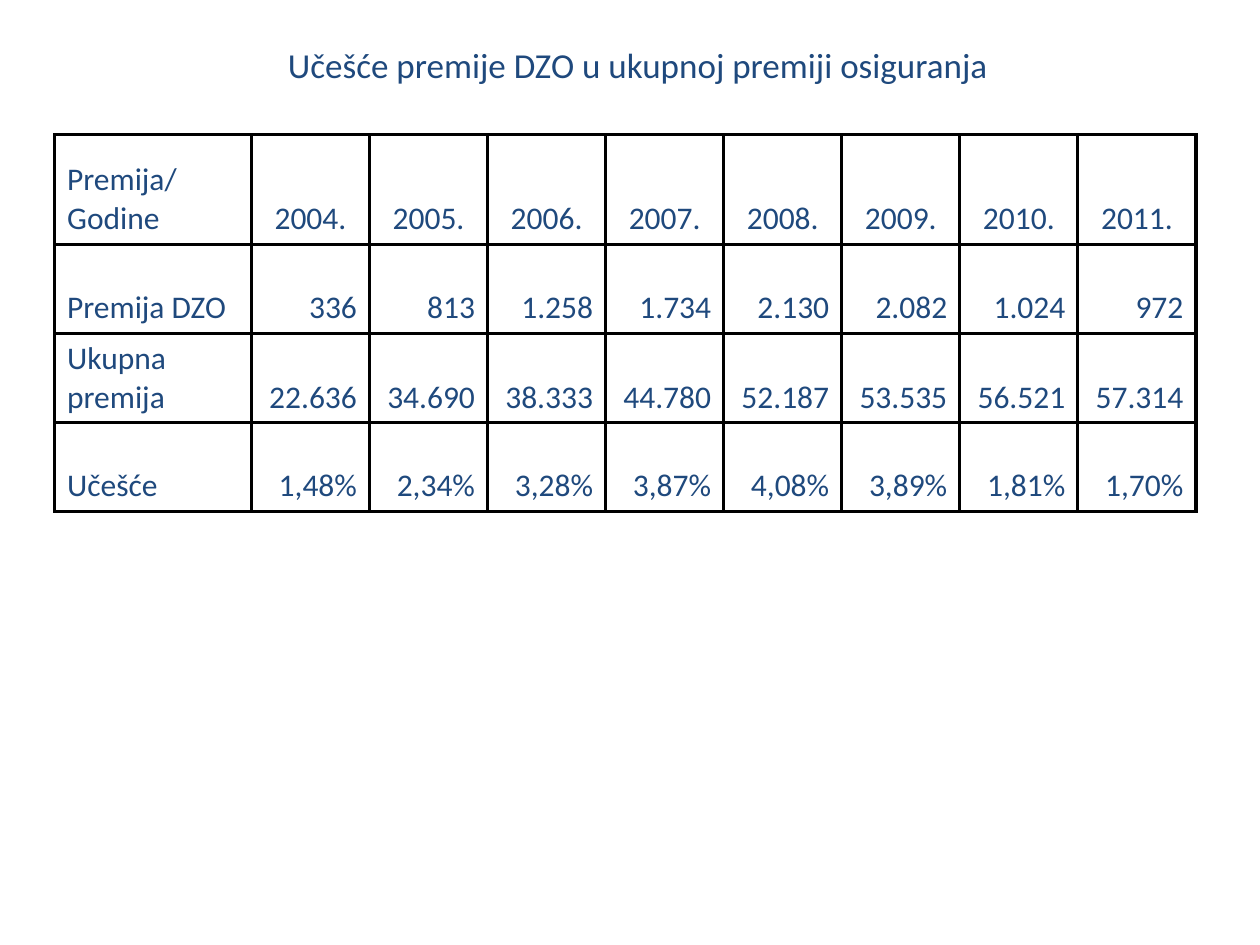
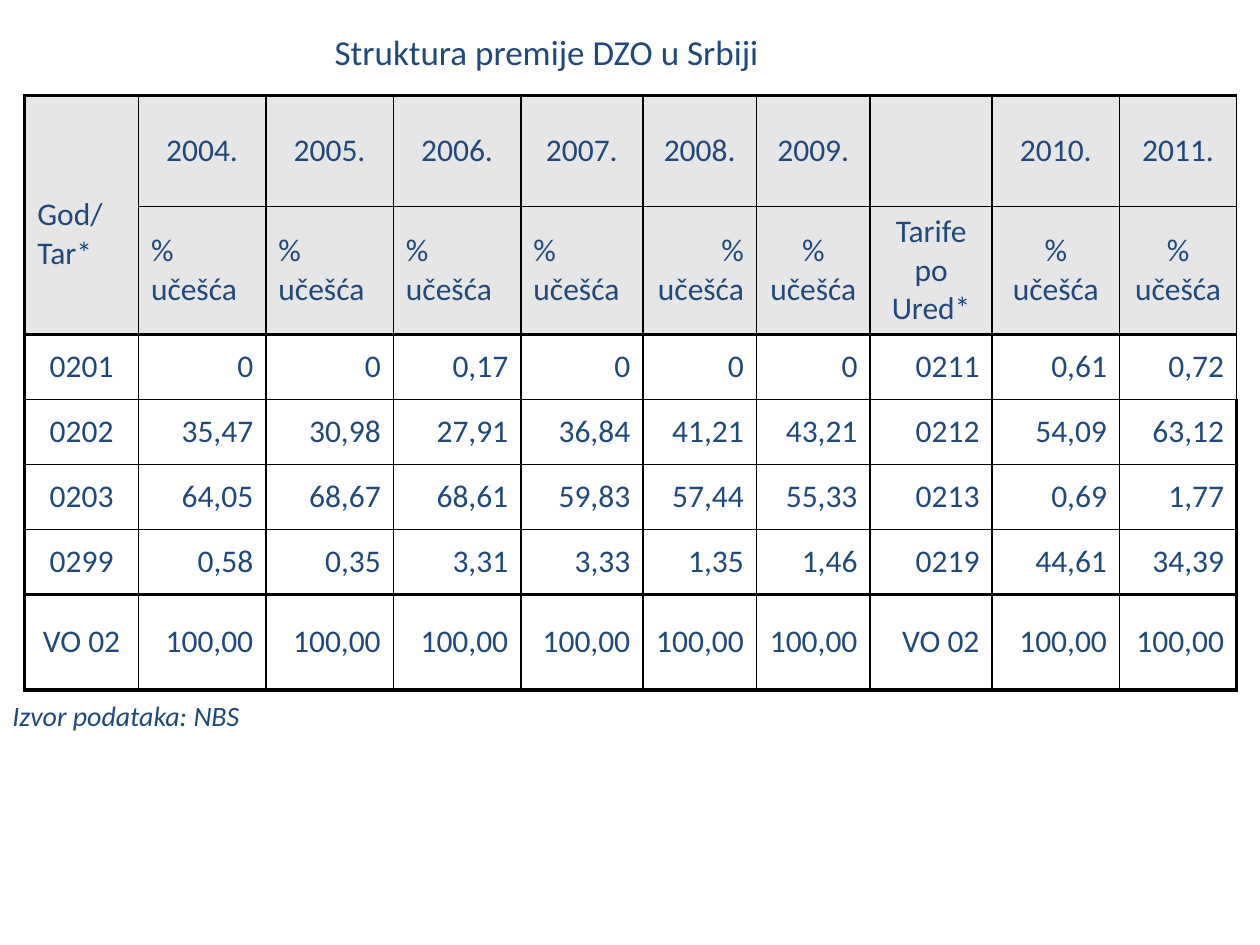
from lxml.etree import SubElement
from pptx import Presentation
from pptx.dml.color import RGBColor
from pptx.enum.text import MSO_ANCHOR as ANCHOR, MSO_AUTO_SIZE as AUTOSIZE, PP_ALIGN as ALIGN
from pptx.oxml.ns import qn
from pptx.util import Cm, Pt

COLORS = {"text": "1F497D", "line": "000000", "header": "E6E6E6", "paper": "FFFFFF"}
FONT = "Calibri"
ALIGNS = {"l": ALIGN.LEFT, "c": ALIGN.CENTER, "r": ALIGN.RIGHT}
YEARS = [f"{year}." for year in range(2004, 2012)]

PREMIUM_ROWS = [
    ["Premija/ Godine", *YEARS],
    ["Premija DZO", "336", "813", "1.258", "1.734", "2.130", "2.082", "1.024", "972"],
    ["Ukupna premija", "22.636", "34.690", "38.333", "44.780", "52.187", "53.535",
     "56.521", "57.314"],
    ["Učešće", "1,48%", "2,34%", "3,28%", "3,87%", "4,08%", "3,89%", "1,81%", "1,70%"],
]
SHARE = "% učešća"
STRUCTURE_ROWS = [
    ["God/\nTar*", *YEARS[:6], "", *YEARS[6:]],
    ["", *[SHARE] * 6, "Tarife po Ured*", *[SHARE] * 2],
    ["0201", "0", "0", "0,17", "0", "0", "0", "0211", "0,61", "0,72"],
    ["0202", "35,47", "30,98", "27,91", "36,84", "41,21", "43,21", "0212", "54,09", "63,12"],
    ["0203", "64,05", "68,67", "68,61", "59,83", "57,44", "55,33", "0213", "0,69", "1,77"],
    ["0299", "0,58", "0,35", "3,31", "3,33", "1,35", "1,46", "0219", "44,61", "34,39"],
    ["VO 02", *["100,00"] * 6, "VO 02", *["100,00"] * 2],
]


def rgb(name):
    return RGBColor.from_string(COLORS[name])


def write(tf, text, size, align, italic=False):
    """Fill a text frame, one paragraph per line of text."""
    for i, line in enumerate(text.split("\n")):
        p = tf.add_paragraph() if i else tf.paragraphs[0]
        p.alignment = align
        r = p.add_run()
        r.text = line
        r.font.name, r.font.size = FONT, Pt(size)
        r.font.italic = italic
        r.font.color.rgb = rgb("text")


def set_borders(cell, widths):
    """Draw the cell's left, right, top and bottom lines, widths in points."""
    tc_pr = cell._tc.get_or_add_tcPr()
    for i, (side, width) in enumerate(zip("LRTB", widths)):
        ln = SubElement(tc_pr, qn(f"a:ln{side}"), w=str(Pt(width)))
        fill = SubElement(ln, qn("a:solidFill"))
        SubElement(fill, qn("a:srgbClr"), val=COLORS["line"])
        tc_pr.insert(i, ln)


def add_grid(slide, rows, box, col_widths, row_heights, aligns, anchor,
             header_rows, header_fill, borders):
    """Add a table; borders(row, col) gives the line widths of a cell."""
    left, top = box
    table = slide.shapes.add_table(
        len(rows), len(col_widths), Cm(left), Cm(top),
        Cm(sum(col_widths)), Cm(sum(row_heights))).table
    table.first_row = table.horz_banding = False
    for col, width in zip(table.columns, col_widths):
        col.width = Cm(width)
    for row, height in zip(table.rows, row_heights):
        row.height = Cm(height)
    for i, row in enumerate(rows):
        for j, text in enumerate(row):
            cell = table.cell(i, j)
            cell.vertical_anchor = anchor
            if i < header_rows:
                cell.fill.solid()
                cell.fill.fore_color.rgb = rgb(header_fill)
            else:
                cell.fill.background()
            set_borders(cell, borders(i, j))
            if text:
                write(cell.text_frame, text, 18, ALIGNS[aligns[i][j]])
    return table


def add_title_slide(prs, title, left, top, width):
    slide = prs.slides.add_slide(prs.slide_layouts[5])
    sp = slide.shapes.title
    sp.left, sp.top, sp.width, sp.height = Cm(left), Cm(top), Cm(width), Cm(1.1)
    tf = sp.text_frame
    tf.auto_size, tf.vertical_anchor = AUTOSIZE.NONE, ANCHOR.MIDDLE
    write(tf, title, 20, ALIGN.CENTER)
    return slide


def add_source_note(slide, text, left, top):
    tf = slide.shapes.add_textbox(Cm(left), Cm(top), Cm(6.53), Cm(0.94)).text_frame
    tf.word_wrap, tf.vertical_anchor = True, ANCHOR.MIDDLE
    write(tf, text, 16, ALIGN.LEFT, italic=True)


def structure_borders(row, col):
    """Heavy lines frame the table, its header and the total row."""
    last_row = 1 if (row, col) == (0, 0) else row
    return (2 if col == 0 else 1,
            2 if col == 9 and row > 2 else 1,
            2 if row in (0, 2, 6) else 1,
            2 if last_row in (1, 5, 6) else 1)


def add_premium_slide(prs):
    slide = add_title_slide(prs, "Učešće premije DZO u ukupnoj premiji osiguranja",
                            1.5, 0.76, 22.72)
    add_grid(slide, PREMIUM_ROWS, (1.1, 2.72), [3.97] + [2.38] * 8,
             [2.2, 1.8, 1.78, 1.78], ["l" + "c" * 8] + ["l" + "r" * 8] * 3,
             ANCHOR.BOTTOM, 1, "paper", lambda row, col: (2, 2, 2, 2))


def add_structure_slide(prs):
    slide = add_title_slide(prs, "Struktura premije DZO u Srbiji", 1.3, 0.48, 19.44)
    table = add_grid(slide, STRUCTURE_ROWS, (0.5, 1.93),
                     [2.29, 2.57, 2.57, 2.57, 2.46, 2.29, 2.29, 2.46, 2.57, 2.36],
                     [2.23, 2.54, 1.31, 1.31, 1.31, 1.31, 1.93],
                     ["l" + "c" * 9, "lllllrcccc"] + ["c" + "r" * 9] * 5,
                     ANCHOR.MIDDLE, 2, "header", structure_borders)
    corner = table.cell(0, 0)
    corner.merge(table.cell(1, 0))
    corner.margin_top = Cm(0.9)
    add_source_note(slide, "Izvor podataka: NBS", 0, 13.95)


def main():
    prs = Presentation()
    prs.slide_width, prs.slide_height = Cm(25.4), Cm(19.05)
    add_premium_slide(prs)
    add_structure_slide(prs)
    prs.save("out.pptx")


if __name__ == "__main__":
    main()
